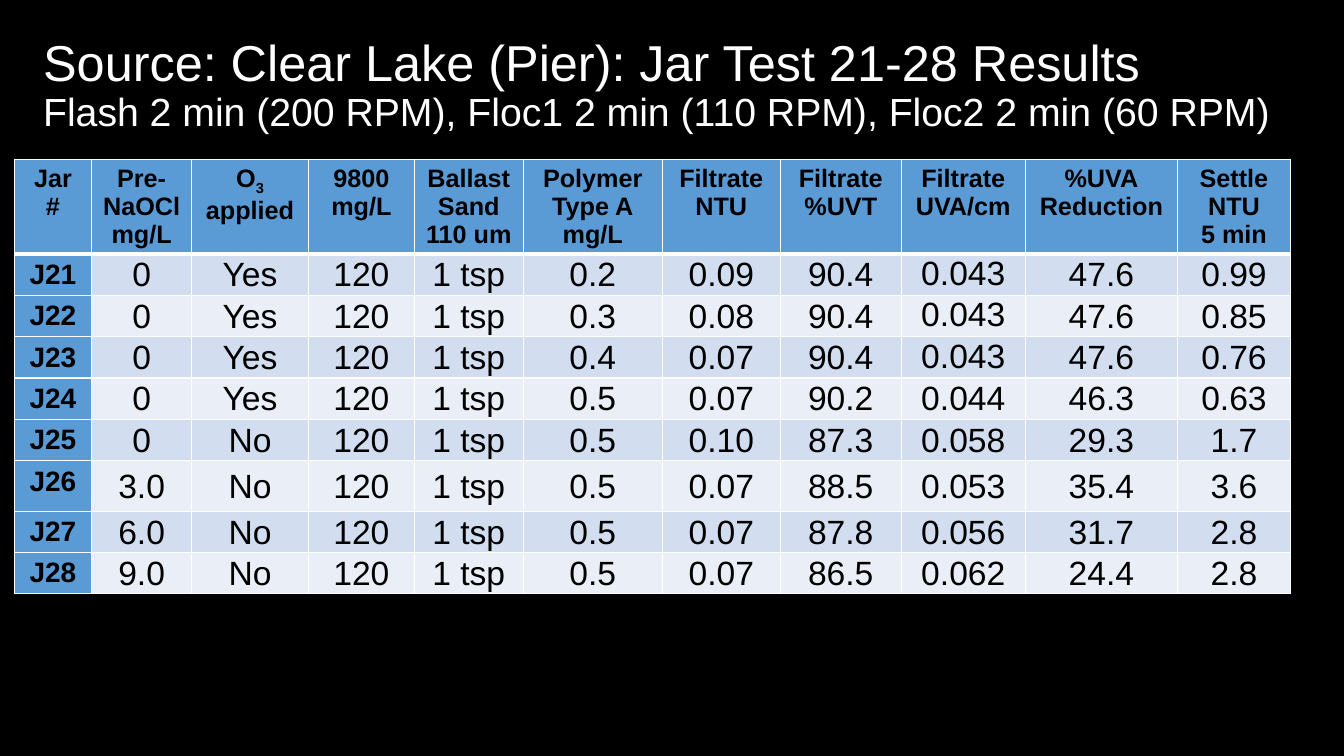
from lxml import etree
from pptx import Presentation
from pptx.dml.color import RGBColor
from pptx.enum.text import MSO_ANCHOR, PP_ALIGN
from pptx.oxml.ns import qn
from pptx.util import Inches, Pt

CENTER = PP_ALIGN.CENTER
MIDDLE, TOP = MSO_ANCHOR.MIDDLE, MSO_ANCHOR.TOP
FONT = "Arial"
COLORS = {
    "background": "000000",
    "title": "FFFFFF",
    "text": "000000",
    "border": "FFFFFF",
    "header": "5B9BD5",
    "odd": "D2DEEF",
    "even": "EAEFF7",
}

HEADERS = [
    "Jar #", "Pre-\vNaOCl\nmg/L", "O3\napplied", "9800\nmg/L",
    "Ballast\nSand\n110 um", "Polymer\nType A\nmg/L", "Filtrate\nNTU",
    "Filtrate\n%UVT", "Filtrate\nUVA/cm", "%UVA\nReduction",
    "Settle\nNTU\n5 min",
]
RESULTS = [
    ["J21", "0", "Yes", "120", "1 tsp", "0.2", "0.09", "90.4", "0.043", "47.6", "0.99"],
    ["J22", "0", "Yes", "120", "1 tsp", "0.3", "0.08", "90.4", "0.043", "47.6", "0.85"],
    ["J23", "0", "Yes", "120", "1 tsp", "0.4", "0.07", "90.4", "0.043", "47.6", "0.76"],
    ["J24", "0", "Yes", "120", "1 tsp", "0.5", "0.07", "90.2", "0.044", "46.3", "0.63"],
    ["J25", "0", "No", "120", "1 tsp", "0.5", "0.10", "87.3", "0.058", "29.3", "1.7"],
    ["J26", "3.0", "No", "120", "1 tsp", "0.5", "0.07", "88.5", "0.053", "35.4", "3.6"],
    ["J27", "6.0", "No", "120", "1 tsp", "0.5", "0.07", "87.8", "0.056", "31.7", "2.8"],
    ["J28", "9.0", "No", "120", "1 tsp", "0.5", "0.07", "86.5", "0.062", "24.4", "2.8"],
]
COLUMN_WIDTHS = [0.77, 0.99, 1.16, 1.05, 1.08, 1.38, 1.17, 1.2, 1.23, 1.51, 1.12]
ROW_HEIGHTS = [0.93] + [0.41] * 5 + [0.5] + [0.41] * 2
UVA_COLUMN = HEADERS.index("Filtrate\nUVA/cm")


def style_font(font, size, color, bold=False):
    font.name = FONT
    font.size = Pt(size)
    font.bold = bold
    font.color.rgb = RGBColor.from_string(COLORS[color])


def add_borders(cell, top, bottom):
    properties = cell._tc.get_or_add_tcPr()
    for side, points in (("lnL", 1), ("lnR", 1), ("lnT", top), ("lnB", bottom)):
        line = etree.SubElement(properties, qn(f"a:{side}"), w=str(Pt(points)))
        fill = etree.SubElement(line, qn("a:solidFill"))
        etree.SubElement(fill, qn("a:srgbClr"), val=COLORS["border"])


prs = Presentation()
prs.slide_width, prs.slide_height = Inches(13.33), Inches(7.5)
slide = prs.slides.add_slide(prs.slide_layouts[6])
slide.background.fill.solid()
slide.background.fill.fore_color.rgb = RGBColor.from_string(COLORS["background"])

table = slide.shapes.add_table(
    len(ROW_HEIGHTS), len(COLUMN_WIDTHS), Inches(0.14), Inches(1.58),
    Inches(sum(COLUMN_WIDTHS)), Inches(sum(ROW_HEIGHTS)),
).table
table.first_row = table.horz_banding = False
for column, width in zip(table.columns, COLUMN_WIDTHS):
    column.width = Inches(width)
for row, height in zip(table.rows, ROW_HEIGHTS):
    row.height = Inches(height)

for r, values in enumerate([HEADERS] + RESULTS):
    for c, value in enumerate(values):
        cell = table.cell(r, c)
        is_label = r == 0 or c == 0
        add_borders(cell, top=3 if r == 1 else 1, bottom=3 if r == 0 else 1)
        band = "header" if is_label else "odd" if r % 2 else "even"
        cell.fill.solid()
        cell.fill.fore_color.rgb = RGBColor.from_string(COLORS[band])
        if not is_label:
            cell.margin_left = cell.margin_right = cell.margin_top = Inches(0.01)
            cell.margin_bottom = 0
            cell.vertical_anchor = TOP if c == UVA_COLUMN and r <= 3 else MIDDLE
        cell.text = value
        size = 18 if r == 0 else 20 if c == 0 else 24
        for paragraph in cell.text_frame.paragraphs:
            paragraph.alignment = CENTER
            style_font(paragraph.font, size, "text", bold=is_label)

ozone = table.cell(0, HEADERS.index("O3\napplied")).text_frame.paragraphs[0]
ozone.runs[0].text = "O"
subscript = ozone.add_run()
subscript.text = "3"
subscript.font._element.set("baseline", "-25000")

title = slide.shapes.add_textbox(
    Inches(0.33), Inches(0.13), Inches(12.47), Inches(1.45)
).text_frame
title.word_wrap = True
title.vertical_anchor = MIDDLE
heading = title.paragraphs[0]
heading.line_spacing = 0.9
for text, size in (
    ("Source: Clear Lake (Pier): Jar Test 21-28 Results", 36),
    ("Flash 2 min (200 RPM), Floc1 2 min (110 RPM), Floc2 2 min (60 RPM)", 28),
):
    if heading.runs:
        heading.add_line_break()
    run = heading.add_run()
    run.text = text
    style_font(run.font, size, "title")

prs.save("out.pptx")
